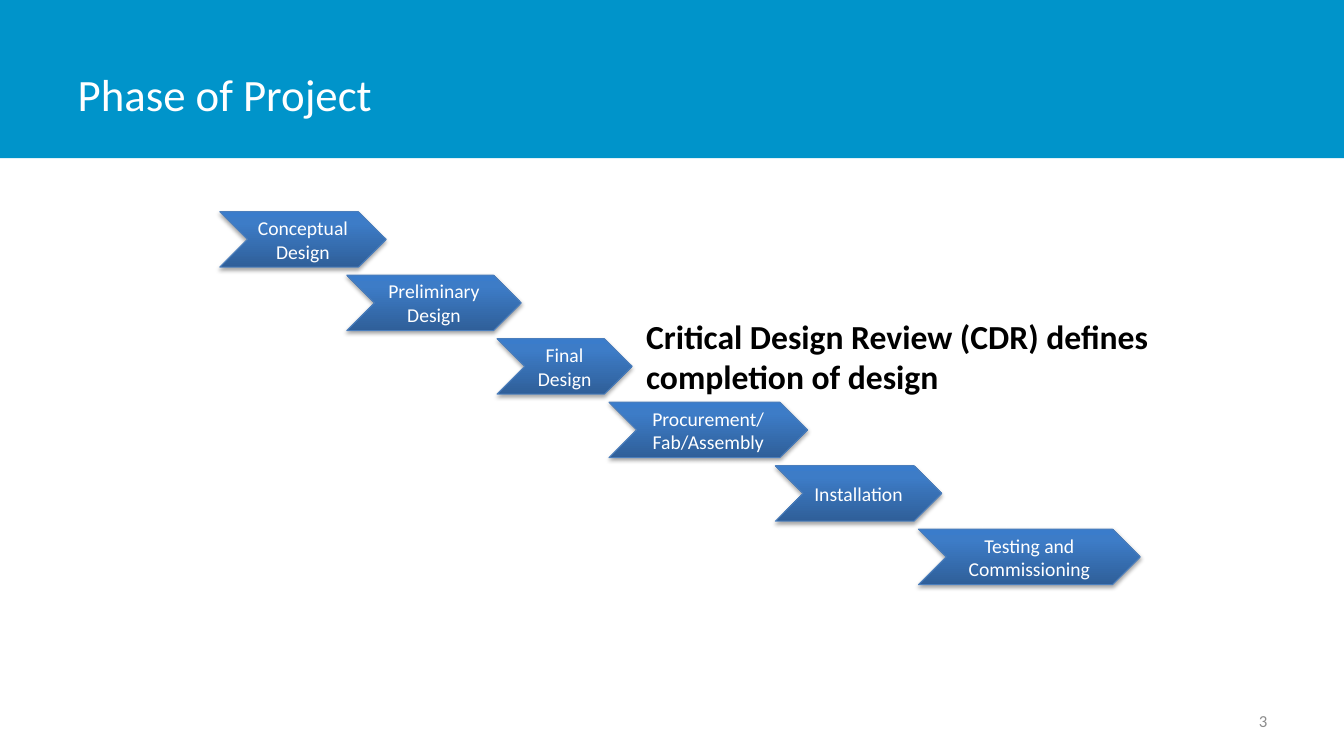
"""Build the project phase slide with its descending staircase of chevrons."""
from dataclasses import dataclass

from lxml.etree import SubElement
from pptx import Presentation
from pptx.dml.color import RGBColor
from pptx.enum.shapes import MSO_SHAPE
from pptx.enum.text import MSO_ANCHOR, MSO_AUTO_SIZE, PP_ALIGN
from pptx.oxml.ns import qn
from pptx.shapes.autoshape import Shape
from pptx.slide import Slide
from pptx.text.text import TextFrame
from pptx.util import Emu, Pt

EMU_PER_PX = 9144
FONT = "Calibri"
COLORS = {
    "band": "0094CA",
    "white": "FFFFFF",
    "black": "000000",
    "number": "8C8C8C",
    "outline": "4B7EBC",
}
GRADIENT = [(0, "2F5F99"), (80, "3D7CC7"), (100, "3A7CCB")]
FIRST_TOP, STEP, CHEVRON_HEIGHT = 210, 63, 55


@dataclass(frozen=True)
class Phase:
    text: str
    left: int
    width: int


PHASES = [
    Phase("Conceptual Design", 218, 165),
    Phase("Preliminary\nDesign", 344, 173),
    Phase("Final\nDesign", 493, 134),
    Phase("Procurement/\vFab/Assembly", 604, 197),
    Phase("Installation", 769, 165),
    Phase("Testing and Commissioning", 911, 220),
]


def px(length: int) -> Emu:
    return Emu(length * EMU_PER_PX)


def box(left: int, top: int, width: int, height: int) -> tuple[Emu, ...]:
    return px(left), px(top), px(width), px(height)


def color(name: str) -> RGBColor:
    return RGBColor.from_string(COLORS[name])


def write(frame: TextFrame, text: str, size: int, color_name: str,
          align: PP_ALIGN = PP_ALIGN.LEFT, anchor: MSO_ANCHOR = MSO_ANCHOR.MIDDLE,
          bold: bool = False) -> None:
    frame.text = text
    frame.word_wrap = True
    frame.auto_size = MSO_AUTO_SIZE.NONE
    frame.vertical_anchor = anchor
    for paragraph in frame.paragraphs:
        paragraph.alignment = align
        for run in paragraph.runs:
            run.font.name = FONT
            run.font.size = Pt(size)
            run.font.bold = bold
            run.font.color.rgb = color(color_name)


def apply_gradient(shape: Shape) -> None:
    shape.fill.gradient()
    shape.fill.gradient_angle = 90
    stops = shape.element.spPr.find(qn("a:gradFill")).find(qn("a:gsLst"))
    for stop in list(stops):
        stops.remove(stop)
    for position, hex_color in GRADIENT:
        stop = SubElement(stops, qn("a:gs"), pos=str(position * 1000))
        SubElement(stop, qn("a:srgbClr"), val=hex_color)


def apply_shadow(shape: Shape) -> None:
    shape.shadow.inherit = False
    effects = shape.element.spPr.find(qn("a:effectLst"))
    shadow = SubElement(effects, qn("a:outerShdw"), blurRad=str(Pt(3.1)),
                        dist=str(Pt(1.8)), dir="5400000", rotWithShape="0")
    shade = SubElement(shadow, qn("a:srgbClr"), val=COLORS["black"])
    SubElement(shade, qn("a:alpha"), val="35000")


def add_header(slide: Slide) -> None:
    title = slide.shapes.title
    title.left, title.top, title.width, title.height = box(67, 30, 1041, 125)
    write(title.text_frame, "Phase of Project", 32, "white")
    band = slide.shapes.add_shape(MSO_SHAPE.RECTANGLE, *box(0, 0, 1333, 157))
    band.shadow.inherit = False
    band.fill.solid()
    band.fill.fore_color.rgb = color("band")
    band.line.fill.background()
    title.element.addprevious(band.element)


def add_phase(slide: Slide, phase: Phase, top: int) -> None:
    chevron = slide.shapes.add_shape(
        MSO_SHAPE.CHEVRON, *box(phase.left, top, phase.width, CHEVRON_HEIGHT))
    apply_gradient(chevron)
    chevron.line.color.rgb = color("outline")
    chevron.line.width = Pt(0.75)
    apply_shadow(chevron)
    write(chevron.text_frame, phase.text, 14, "white", PP_ALIGN.CENTER)


def main() -> None:
    presentation = Presentation()
    presentation.slide_width, presentation.slide_height = px(1333), px(750)
    slide = presentation.slides.add_slide(presentation.slide_layouts[5])
    add_header(slide)
    for index, phase in enumerate(PHASES):
        add_phase(slide, phase, FIRST_TOP + index * STEP)
    review = slide.shapes.add_textbox(*box(631, 308, 540, 91))
    write(review.text_frame, "Critical Design Review (CDR) defines \vcompletion of design",
          24, "black", anchor=MSO_ANCHOR.TOP, bold=True)
    number = slide.shapes.add_textbox(*box(956, 695, 311, 40))
    write(number.text_frame, "3", 12, "number", PP_ALIGN.RIGHT)
    presentation.save("out.pptx")


if __name__ == "__main__":
    main()
